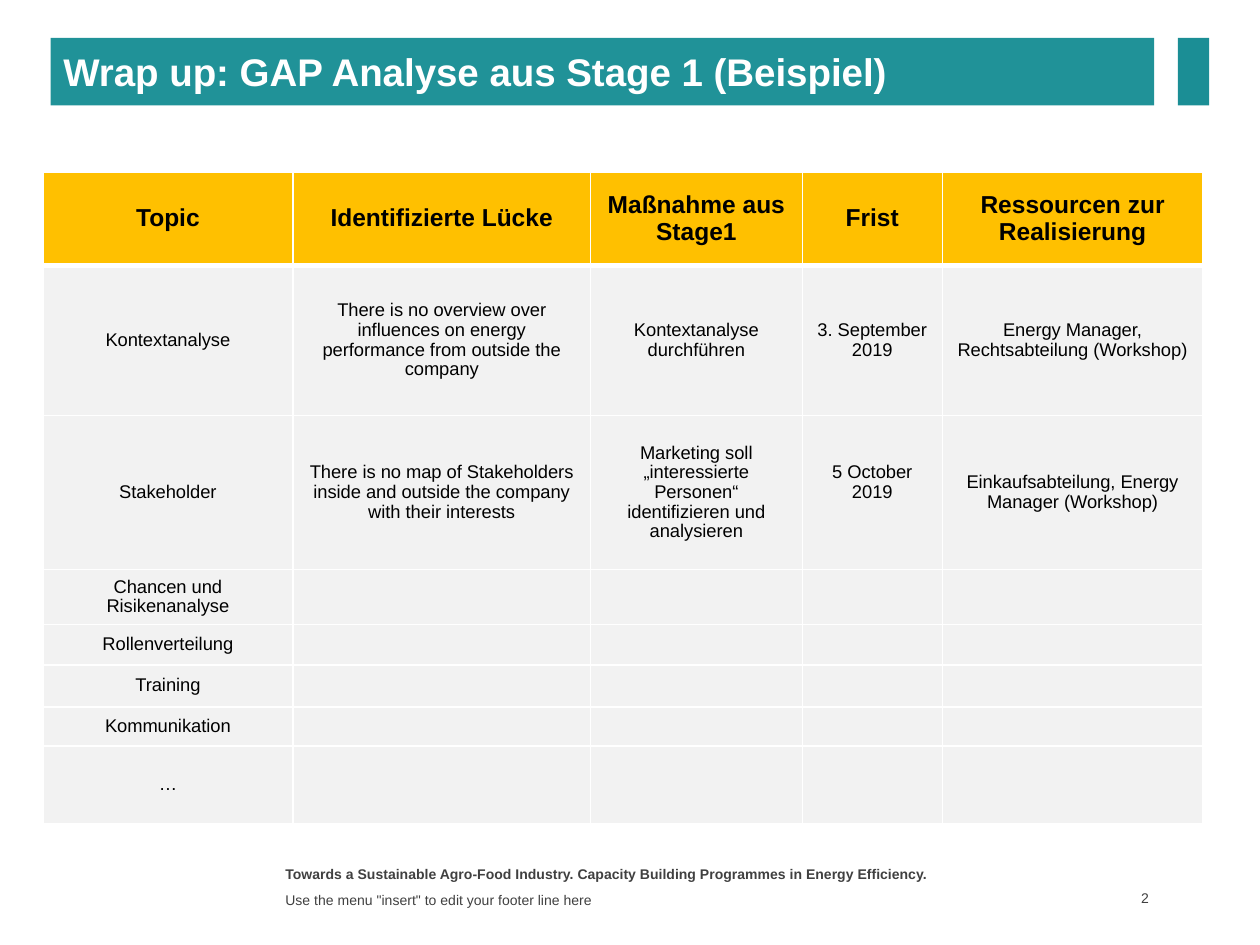
"""Build the gap analysis wrap-up slide with its table of measures."""
import lxml.etree
import pptx
import pptx.dml.color
import pptx.enum.shapes
import pptx.enum.text
import pptx.oxml.ns
import pptx.util

Pt = pptx.util.Pt
ALIGN = pptx.enum.text.PP_ALIGN
ANCHOR = pptx.enum.text.MSO_ANCHOR
COLORS = {
    "banner": "209298",
    "accent": "1B8E95",
    "header": "FFC000",
    "body": "F2F2F2",
    "white": "FFFFFF",
    "black": "000000",
    "footer": "404040",
}
COLUMN_WIDTHS = [143, 170, 121, 80, 149]
ROW_HEIGHTS = [53, 86, 88, 31, 23, 24, 22.5, 44.5]
ROWS = [
    ["Topic", "Identifizierte Lücke", "Maßnahme aus Stage1", "Frist",
     "Ressourcen zur Realisierung"],
    ["Kontextanalyse",
     "There is no overview over influences on energy performance from outside the company",
     "Kontextanalyse durchführen", "3. September 2019",
     "Energy Manager, Rechtsabteilung (Workshop)"],
    ["Stakeholder",
     "There is no map of Stakeholders inside and outside the company with their interests",
     "Marketing soll „interessierte Personen“ identifizieren und analysieren",
     "5 October 2019", "Einkaufsabteilung, Energy Manager (Workshop)"],
    ["Chancen und Risikenanalyse"],
    ["Rollenverteilung"],
    ["Training"],
    ["Kommunikation"],
    ["…"],
]


class SlideBuilder:
    """Hold the style and the current slide."""

    font = "Arial"

    def __init__(self, slide):
        """Remember the slide to draw on."""
        self.slide = slide

    def color(self, name):
        """Return the named colour."""
        return pptx.dml.color.RGBColor.from_string(COLORS[name])

    def paint(self, target, name):
        """Give a shape or cell a solid fill."""
        target.fill.solid()
        target.fill.fore_color.rgb = self.color(name)

    def add_text(self, frame, text, size, color, bold=False, align=ALIGN.LEFT):
        """Put one run into the first paragraph of a frame."""
        paragraph = frame.paragraphs[0]
        paragraph.alignment = align
        run = paragraph.add_run()
        run.text = text
        run.font.name = self.font
        run.font.size = Pt(size)
        run.font.bold = bold
        run.font.color.rgb = self.color(color)
        return paragraph

    def title(self, text, left, top, width, height):
        """Move and format the title placeholder as a banner."""
        banner = self.slide.shapes.title
        banner.left, banner.top = Pt(left), Pt(top)
        banner.width, banner.height = Pt(width), Pt(height)
        self.paint(banner, "banner")
        frame = banner.text_frame
        frame.auto_size = pptx.enum.text.MSO_AUTO_SIZE.NONE
        frame.vertical_anchor = ANCHOR.MIDDLE
        self.add_text(frame, text, 22, "white", bold=True)

    def block(self, color, left, top, width, height):
        """Add a plain rectangle."""
        block = self.slide.shapes.add_shape(
            pptx.enum.shapes.MSO_SHAPE.RECTANGLE, Pt(left), Pt(top), Pt(width), Pt(height))
        block.shadow.inherit = False
        block.line.fill.background()
        self.paint(block, color)

    def label(self, text, left, top, width, height, anchor=ANCHOR.MIDDLE,
              bold=False, align=ALIGN.LEFT, right_inset=7.2):
        """Add a small footer text."""
        frame = self.slide.shapes.add_textbox(
            Pt(left), Pt(top), Pt(width), Pt(height)).text_frame
        frame.word_wrap = True
        frame.vertical_anchor = anchor
        frame.margin_right = Pt(right_inset)
        self.add_text(frame, text, 8, "footer", bold, align)

    def borders(self, cell, top, bottom):
        """Draw white borders around a cell."""
        properties = cell._tc.get_or_add_tcPr()
        for index, (side, width) in enumerate(
                [("lnL", 1), ("lnR", 1), ("lnT", top), ("lnB", bottom)]):
            line = lxml.etree.Element(pptx.oxml.ns.qn("a:" + side), w=str(Pt(width)))
            fill = lxml.etree.SubElement(line, pptx.oxml.ns.qn("a:solidFill"))
            lxml.etree.SubElement(fill, pptx.oxml.ns.qn("a:srgbClr"), val=COLORS["white"])
            properties.insert(index, line)

    def cell(self, cell, text, is_header):
        """Fill and letter one table cell."""
        size = 14 if is_header else 10.5
        cell.vertical_anchor = ANCHOR.MIDDLE
        self.paint(cell, "header" if is_header else "body")
        if text:
            paragraph = self.add_text(
                cell.text_frame, text, size, "black", is_header, ALIGN.CENTER)
            paragraph.line_spacing = 0.96
        else:
            ending = cell.text_frame.paragraphs[0]._p.get_or_add_endParaRPr()
            ending.set("sz", str(int(size * 100)))

    def table(self, rows, widths, heights, left, top):
        """Add the table, leaving missing cells blank."""
        table = self.slide.shapes.add_table(
            len(rows), len(widths), Pt(left), Pt(top), Pt(sum(widths)), Pt(sum(heights))).table
        table.horz_banding = False
        for column, width in zip(table.columns, widths):
            column.width = Pt(width)
        for number, (texts, height) in enumerate(zip(rows, heights)):
            table.rows[number].height = Pt(height)
            for position in range(len(widths)):
                cell = table.cell(number, position)
                text = texts[position] if position < len(texts) else ""
                self.cell(cell, text, number == 0)
                self.borders(cell, 3 if number == 1 else 1, 3 if number == 0 else 1)
        return table


def main():
    """Build and save the slide."""
    deck = pptx.Presentation()
    deck.slide_width, deck.slide_height = Pt(720), Pt(540)
    builder = SlideBuilder(deck.slides.add_slide(deck.slide_layouts[5]))
    builder.label("Towards a Sustainable Agro-Food Industry. "
                  "Capacity Building Programmes in Energy Efficiency.",
                  156, 491, 396, 15, anchor=ANCHOR.TOP, bold=True)
    builder.label('Use the menu "insert" to edit your footer line here', 156, 507, 396, 14)
    builder.label("2", 619, 506, 40.5, 14.5, align=ALIGN.RIGHT, right_inset=3)
    gaps = builder.table(ROWS, COLUMN_WIDTHS, ROW_HEIGHTS, 24.5, 98.6)
    stakeholder_deadline = gaps.cell(2, 3)
    stakeholder_deadline.margin_bottom = Pt(15.2)
    builder.title("Wrap up: GAP Analyse aus Stage 1 (Beispiel)", 29, 21.6, 630.5, 38.6)
    builder.block("accent", 673, 21.6, 18, 38.6)
    deck.save("out.pptx")


if __name__ == "__main__":
    main()
